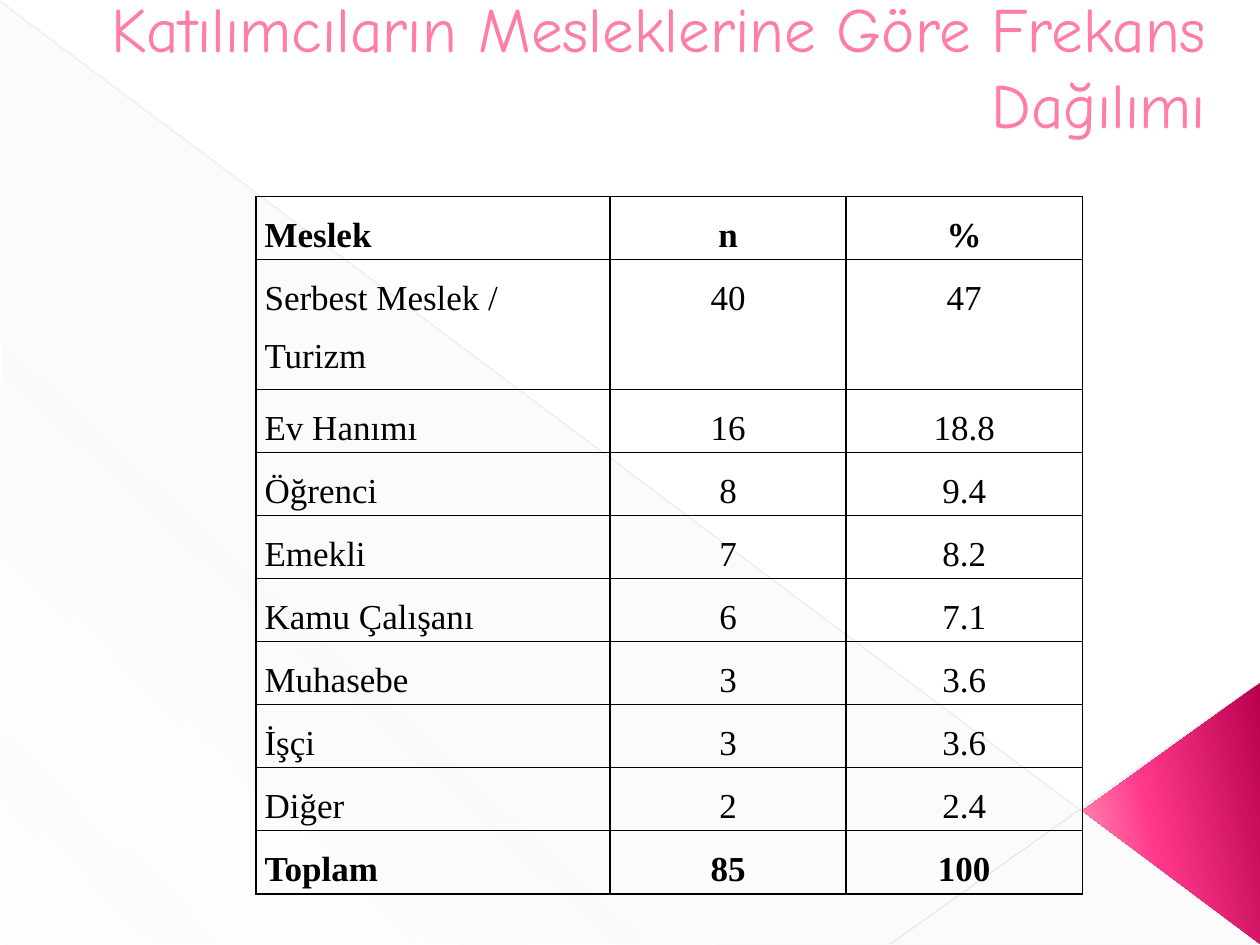
from lxml import etree
from pptx import Presentation
from pptx.dml.color import RGBColor
from pptx.enum.shapes import MSO_CONNECTOR as CONN, MSO_SHAPE as SHAPE
from pptx.enum.text import MSO_ANCHOR as ANCHOR, PP_ALIGN as ALIGN
from pptx.oxml import parse_xml
from pptx.oxml.ns import nsdecls, qn
from pptx.util import Inches, Pt

COLORS = {
    "title": "FF7DA7", "title_edge": "B12761", "text": "000000",
    "shade": "D2D2D2", "diagonal": "BFBFBF", "corner": "C6C6C6",
    "dark": "B8014E", "mid": "FF388C", "light": "FF9CB9",
}
ROWS = [
    ("Meslek", "n", "%"),
    ("Serbest Meslek / Turizm", "40", "47"),
    ("Ev Hanımı", "16", "18.8"),
    ("Öğrenci", "8", "9.4"),
    ("Emekli", "7", "8.2"),
    ("Kamu Çalışanı", "6", "7.1"),
    ("Muhasebe", "3", "3.6"),
    ("İşçi", "3", "3.6"),
    ("Diğer", "2", "2.4"),
    ("Toplam", "85", "100"),
]


def write_text(tf, text, font="Times New Roman", size=20, color="text",
               bold=False, align=ALIGN.LEFT, spacing=None):
    """Fill the first paragraph of a text frame and return it with its run."""
    tf.word_wrap = True
    p = tf.paragraphs[0]
    p.alignment = align
    if spacing:
        p.line_spacing = spacing
    r = p.add_run()
    r.text = text
    r.font.name, r.font.size, r.font.bold = font, Pt(size), bold
    r.font.color.rgb = RGBColor.from_string(COLORS[color])
    return p, r


def line_xml(tag, color, width):
    """Return a solid line element of the given tag."""
    return parse_xml(
        f'<a:{tag} {nsdecls("a")} w="{Pt(width)}"><a:solidFill>'
        f'<a:srgbClr val="{COLORS[color]}"/></a:solidFill></a:{tag}>')


def add_gradient_shape(slide, kind, box, stops, angle):
    """Add a borderless shape filled by (position, colour, opacity) stops."""
    s = slide.shapes.add_shape(kind, *map(Inches, box))
    s.shadow.inherit = False
    s.line.fill.background()
    marks = "".join(
        f'<a:gs pos="{pos * 1000}"><a:srgbClr val="{COLORS[color]}">'
        f'<a:alpha val="{alpha * 1000}"/></a:srgbClr></a:gs>'
        for pos, color, alpha in stops)
    s.element.spPr.insert(2, parse_xml(
        f'<a:gradFill {nsdecls("a")} rotWithShape="1"><a:gsLst>{marks}</a:gsLst>'
        f'<a:lin ang="{angle * 60000}" scaled="0"/></a:gradFill>'))
    return s


def add_faint_line(slide, start, end, color, width, alpha):
    """Add a thin translucent straight line."""
    line = slide.shapes.add_connector(
        CONN.STRAIGHT, *map(Inches, (*start, *end)))
    line.line.width = Pt(width)
    line.line.color.rgb = RGBColor.from_string(COLORS[color])
    sp_pr = line.element.spPr
    rgb = next(sp_pr.iter(qn("a:srgbClr")))
    etree.SubElement(rgb, qn("a:alpha")).set("val", str(alpha * 1000))
    etree.SubElement(sp_pr, qn("a:effectLst"))


def add_backdrop(slide, left, top, width, height):
    """Draw the shaded half, the two faint lines and the pink corner."""
    right, bottom = left + width, top + height
    add_gradient_shape(
        slide, SHAPE.RIGHT_TRIANGLE,
        (left + 0.01, top + 0.02, width - 0.01, height - 0.02),
        [(0, "shade", 10), (70, "shade", 8), (100, "shade", 1)], 133)
    add_faint_line(slide, (left, top + 0.01), (right - 0.01, bottom - 0.01),
                   "diagonal", 0.39, 35)
    add_faint_line(slide, (right, bottom - 2.09), (right - 2.93, bottom - 0.01),
                   "corner", 0.47, 45)
    corner = add_gradient_shape(
        slide, SHAPE.ISOSCELES_TRIANGLE,
        (right - 1.74, bottom - 1.75, 2.07, 1.41),
        [(0, "dark", 100), (60, "mid", 100), (100, "light", 100)], 258)
    corner.adjustments[0] = 0.51
    corner.rotation = 270


def add_title(slide, left, top, width, height, text):
    """Add the right-aligned outlined title."""
    tf = slide.shapes.add_textbox(
        *map(Inches, (left, top, width, height))).text_frame
    tf.vertical_anchor = ANCHOR.BOTTOM
    p, r = write_text(tf, text, font="Comic Neue", size=36, color="title",
                      align=ALIGN.RIGHT)
    p._p.get_or_add_pPr().set("marL", str(Inches(0.53)))
    r.font._element.insert(0, line_xml("ln", "title_edge", 0.5))


def add_frequency_table(slide, left, top, width, height, rows):
    """Add the ruled table with bold first and last rows."""
    table = slide.shapes.add_table(
        len(rows), len(rows[0]),
        *map(Inches, (left, top, width, height))).table
    table.first_row = table.horz_banding = False
    for column, share in zip(table.columns, (3, 2, 2)):
        column.width = Inches(width * share / 7)
    row_height = 0.48
    for i, row in enumerate(rows):
        tall = height - row_height * (len(rows) - 1)
        table.rows[i].height = Inches(tall if i == 1 else row_height)
        for j, text in enumerate(row):
            cell = table.cell(i, j)
            cell.margin_left = cell.margin_right = Inches(0.07)
            cell.margin_top = cell.margin_bottom = 0
            write_text(cell.text_frame, text, bold=i in (0, len(rows) - 1),
                       align=ALIGN.CENTER if j else ALIGN.LEFT, spacing=1.5)
            cell.fill.background()
            tc_pr = cell._tc.get_or_add_tcPr()
            for k, tag in enumerate(("lnL", "lnR", "lnT", "lnB")):
                tc_pr.insert(k, line_xml(tag, "text", 1))


def main():
    """Build the slide and save it."""
    prs = Presentation()
    prs.slide_width, prs.slide_height = Inches(10), Inches(7.5)
    slide = prs.slides.add_slide(prs.slide_layouts[6])
    add_backdrop(slide, 0, 0, 10, 7.5)
    add_title(slide, 0, 0.23, 9.67, 0.94,
              "Katılımcıların Mesleklerine Göre Frekans Dağılımı")
    add_frequency_table(slide, 2.03, 1.56, 6.56, 5.35, ROWS)
    prs.save("out.pptx")


if __name__ == "__main__":
    main()
